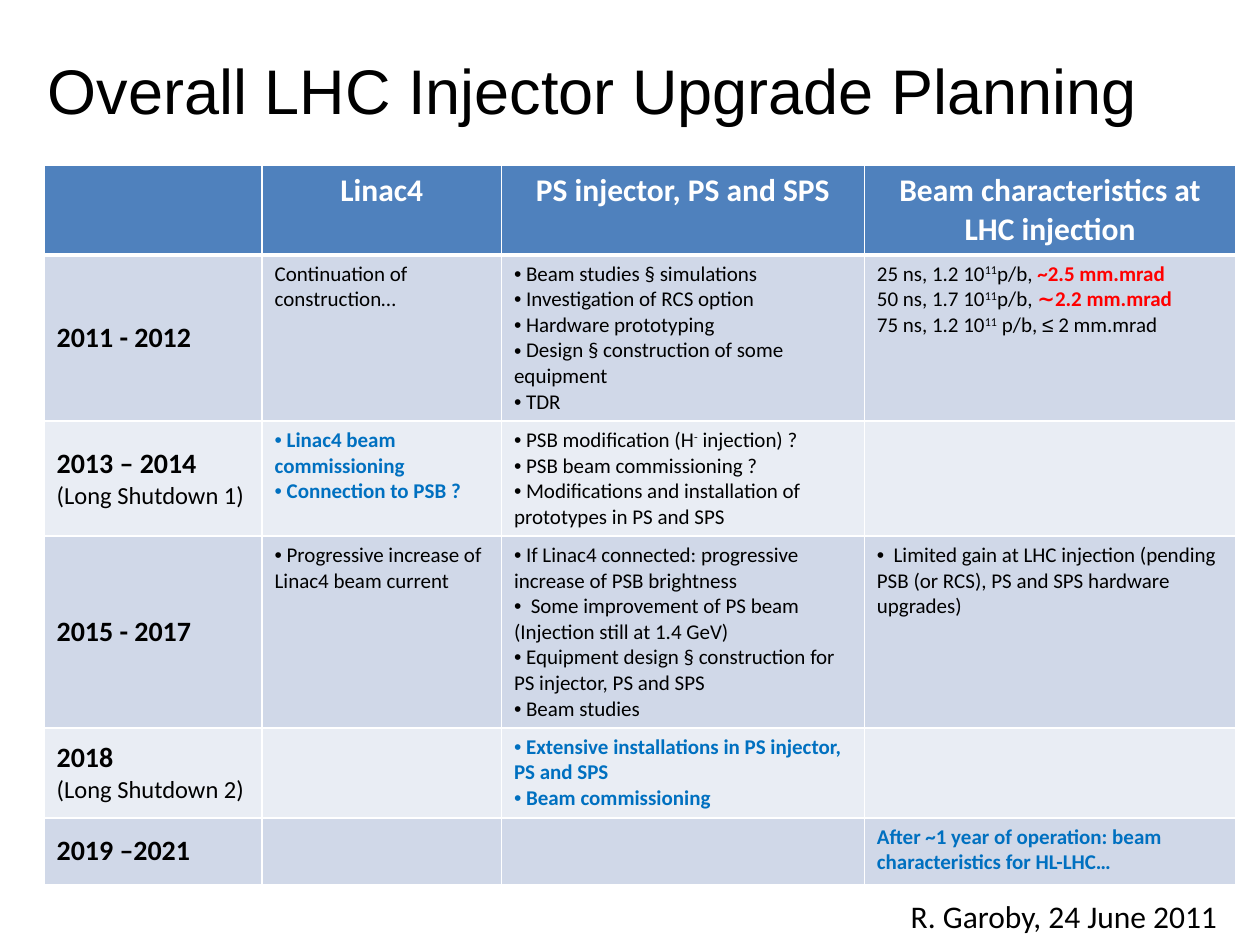
import pptx
import pptx.dml.color
import pptx.enum.text
import pptx.oxml
import pptx.oxml.ns
import pptx.util

ALIGN = pptx.enum.text.PP_ALIGN
ANCHOR = pptx.enum.text.MSO_ANCHOR
AUTOSIZE = pptx.enum.text.MSO_AUTO_SIZE
COLORS = {
    "black": "000000", "white": "FFFFFF", "red": "FF0000", "blue": "0070C0",
    "header": "4F81BD", "odd": "D0D8E8", "even": "E9EDF4",
}
EMPHASIS = {"color": "blue", "bold": True}
RED = {"color": "red", "bold": True}
RAISED = {"raised": True}


def write(para, text, font="Calibri", size=12, color="black", bold=False, raised=False):
    """Add one formatted span to a paragraph."""
    span = para.add_run()
    span.text = text
    span.font.name = font
    span.font.size = pptx.util.Pt(size)
    span.font.bold = bold
    span.font.color.rgb = pptx.dml.color.RGBColor.from_string(COLORS[color])
    if raised:
        span.font._element.set("baseline", "30000")


def make(tag, parent, **attributes):
    """Append a DrawingML element to a parent."""
    child = pptx.oxml.parse_xml(f"<a:{tag} {pptx.oxml.ns.nsdecls('a')}/>")
    for name, value in attributes.items():
        child.set(name, str(value))
    parent.append(child)
    return child


def bullets(*texts, **style):
    """Describe a list of bulleted lines."""
    return [{"spans": [(text, style)], "bullet": True} for text in texts]


def lines(*rows, **layout):
    """Describe plain lines, each a list of (text, style) spans."""
    return [{"spans": spans, **layout} for spans in rows]


def heading(text):
    """Describe a column heading."""
    return lines([(text, {"size": 18, "color": "white", "bold": True})], align=ALIGN.CENTER)


def period(years, note=None):
    """Describe the first cell of a row."""
    rows = [[(years, {"size": 16, "bold": True})]]
    if note:
        rows.append([(note, {"size": 14})])
    return lines(*rows)


class Planner:
    """Hold the deck, its page and the style of its elements."""

    def __init__(self):
        """Open a 4:3 deck with a titled page."""
        self.deck = pptx.Presentation()
        self.deck.slide_width = pptx.util.Inches(10)
        self.deck.slide_height = pptx.util.Inches(7.5)
        self.page = self.deck.slides.add_slide(self.deck.slide_layouts[5])

    def across(self, percent):
        """Return a percentage of the slide width."""
        return int(self.deck.slide_width * percent / 100)

    def down(self, percent):
        """Return a percentage of the slide height."""
        return int(self.deck.slide_height * percent / 100)

    def title(self, text, left, top, width, height, **style):
        """Place and fill the title placeholder."""
        box = self.page.shapes.title
        box.left, box.width = self.across(left), self.across(width)
        box.top, box.height = self.down(top), self.down(height)
        frame = box.text_frame
        frame.auto_size = AUTOSIZE.NONE
        frame.vertical_anchor = ANCHOR.MIDDLE
        frame.paragraphs[0].alignment = ALIGN.LEFT
        write(frame.paragraphs[0], text, **style)

    def label(self, text, left, top, width, height, **style):
        """Add a single-line text box."""
        box = self.page.shapes.add_textbox(
            self.across(left), self.down(top), self.across(width), self.down(height))
        box.text_frame.word_wrap = False
        box.text_frame.auto_size = AUTOSIZE.SHAPE_TO_FIT_TEXT
        write(box.text_frame.paragraphs[0], text, **style)

    def border(self, cell, row):
        """Draw white cell edges, thicker under the header row."""
        thick = {("B", 0), ("T", 1)}
        for side in "LRTB":
            points = 3 if (side, row) in thick else 1
            edge = make(f"ln{side}", cell._tc.get_or_add_tcPr(), w=pptx.util.Pt(points))
            make("srgbClr", make("solidFill", edge), val=COLORS["white"])

    def fill_cell(self, cell, content):
        """Write described paragraphs into a cell."""
        for number, item in enumerate(content):
            frame = cell.text_frame
            para = frame.add_paragraph() if number else frame.paragraphs[0]
            para.alignment = item.get("align", ALIGN.LEFT)
            if item.get("bullet"):
                layout = para._p.get_or_add_pPr()
                make("buFont", layout, typeface="Arial")
                make("buChar", layout, char="•")
            for text, style in item["spans"]:
                write(para, text, **style)

    def table(self, content, left, top, widths, heights):
        """Add the banded planning table."""
        grid = self.page.shapes.add_table(
            len(heights), len(widths), self.across(left), self.down(top),
            self.across(sum(widths)), self.down(sum(heights))).table
        for column, width in zip(grid.columns, widths):
            column.width = self.across(width)
        for number, (row, height) in enumerate(zip(grid.rows, heights)):
            row.height = self.down(height)
            shade = "header" if number == 0 else ("even", "odd")[number % 2]
            for place, cell in enumerate(row.cells):
                self.border(cell, number)
                cell.fill.solid()
                cell.fill.fore_color.rgb = pptx.dml.color.RGBColor.from_string(COLORS[shade])
                if number and place == 0:
                    cell.vertical_anchor = ANCHOR.MIDDLE
                self.fill_cell(cell, content[number][place])


PLAN = [
    [[], heading("Linac4"), heading("PS injector, PS and SPS"),
     heading("Beam characteristics at LHC injection")],
    [period("2011 - 2012"),
     lines([("Continuation of construction…", {})]),
     bullets(" Beam studies § simulations", " Investigation of RCS option",
             " Hardware prototyping", " Design § construction of some equipment", " TDR"),
     lines([("25 ns, 1.2 10", {}), ("11", RAISED), ("p/b, ", {}), ("~2.5 mm.mrad", RED)],
           [("50 ns, 1.7 10", {}), ("11", RAISED), ("p/b, ", {}),
            ("∼", {"font": "Arial", **RED}), ("2.2 mm.mrad", RED)],
           [("75 ns, 1.2 10", {}), ("11", RAISED), (" p/b, ", {}),
            ("≤", {"font": "Arial"}), (" 2 mm.mrad", {})])],
    [period("2013 – 2014", "(Long Shutdown 1)"),
     bullets(" Linac4 beam commissioning", " Connection to PSB ?", **EMPHASIS),
     [{"spans": [(" PSB modification (H", {}), ("-", RAISED), (" injection) ?", {})],
       "bullet": True},
      *bullets(" PSB beam commissioning ?",
               " Modifications and installation of prototypes in PS and SPS")],
     []],
    [period("2015 - 2017"),
     bullets(" Progressive increase of Linac4 beam current"),
     bullets(" If Linac4 connected: progressive increase of PSB brightness",
             "  Some improvement of PS beam (Injection still at 1.4 GeV)",
             " Equipment design § construction for PS injector, PS and SPS",
             " Beam studies"),
     bullets("  Limited gain at LHC injection (pending PSB (or RCS), "
             "PS and SPS hardware upgrades)")],
    [period("2018", "(Long Shutdown 2)"), [],
     bullets(" Extensive installations in PS injector, PS and SPS",
             " Beam commissioning", **EMPHASIS),
     []],
    [period("2019 –2021"), [], [],
     lines([("After ~1 year of operation: beam characteristics for HL-LHC…", EMPHASIS)])],
]


def main():
    """Build and save the planning page."""
    planner = Planner()
    planner.title("Overall LHC Injector Upgrade Planning", 2.8, 4, 95.3, 10.93,
                  font="Arial", size=36)
    planner.table(PLAN, 3.5, 17.5, widths=[17.3, 19, 28.8, 29.5],
                  heights=[9.35, 17.6, 12.15, 20.3, 9.5, 7.1])
    planner.label("R. Garoby, 24 June 2011", 71.3, 94.27, 26.6, 5.33, size=18)
    planner.deck.save("out.pptx")


if __name__ == "__main__":
    main()
